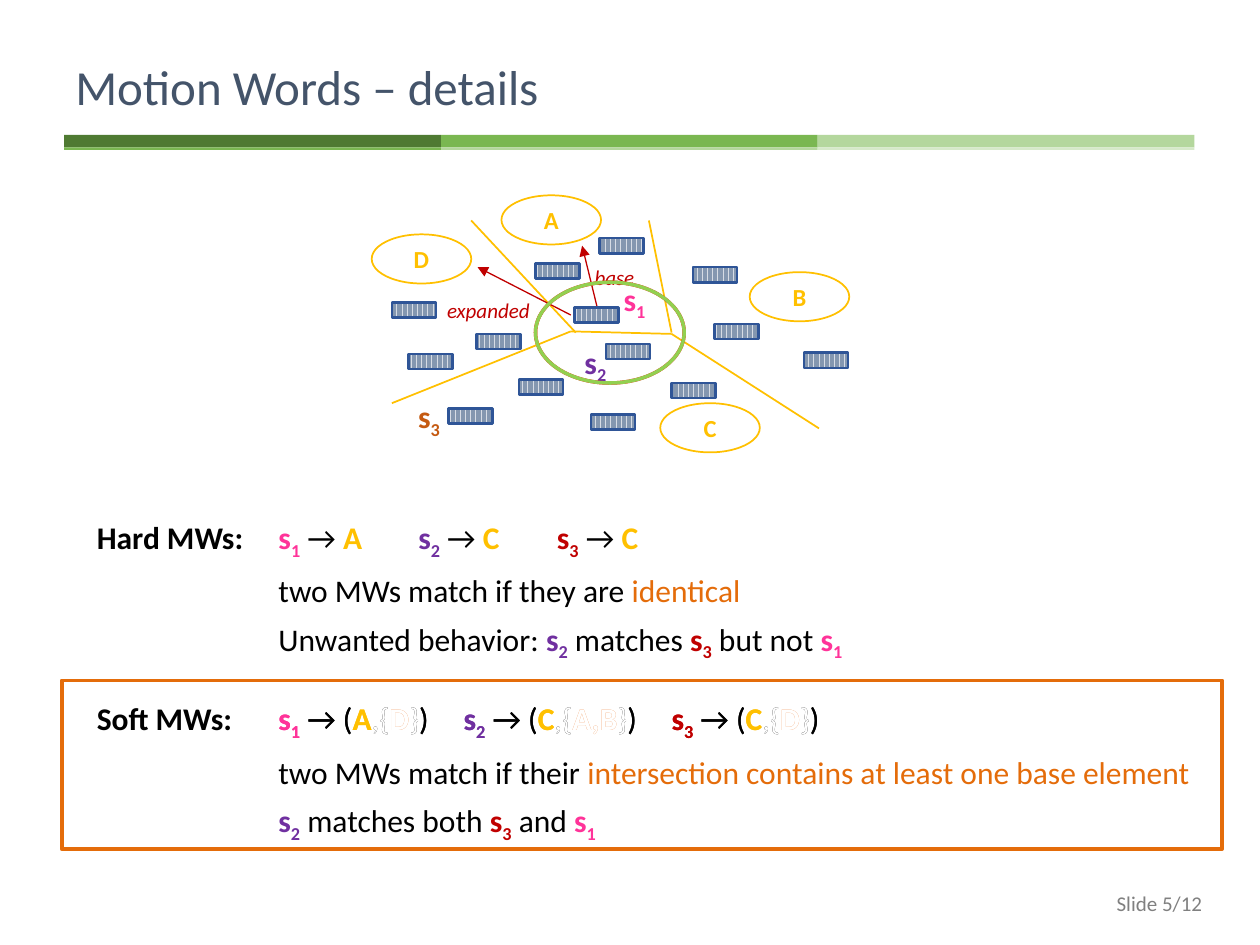
from pptx import Presentation
from pptx.util import Inches, Pt
from pptx.dml.color import RGBColor
from pptx.enum.dml import MSO_PATTERN
from pptx.enum.shapes import MSO_SHAPE, MSO_CONNECTOR
from pptx.enum.text import PP_ALIGN, MSO_ANCHOR
from lxml import etree

NS = "{http://schemas.openxmlformats.org/drawingml/2006/main}"
BLACK, WHITE, GOLD, RED = "000000", "FFFFFF", "FFC000", "C00000"
PINK, PLUM, RUST, FLAME = "FF3399", "7030A0", "C55A11", "E46C0A"
tint = RGBColor.from_string

deck = Presentation()
deck.slide_width, deck.slide_height = Inches(10), Inches(7.5)
slide = deck.slides.add_slide(deck.slide_layouts[6])


def draw(kind, box, fill=None, line=None, width=1):
    shape = slide.shapes.add_shape(kind, *map(Inches, box))
    shape.shadow.inherit = False
    if fill:
        shape.fill.solid()
        shape.fill.fore_color.rgb = tint(fill)
    else:
        shape.fill.background()
    if line:
        shape.line.color.rgb = tint(line)
        shape.line.width = Pt(width)
    else:
        shape.line.fill.background()
    return shape


def write(shape, rows, size=18, wrap=False, pad=0.1, space=0, tabs=()):
    frame = shape.text_frame
    frame.word_wrap = wrap
    frame.margin_left = frame.margin_right = Inches(pad)
    for n, row in enumerate(rows):
        para = frame.paragraphs[0] if n == 0 else frame.add_paragraph()
        para.space_before = Pt(space)
        if tabs and n == 0:
            stops = etree.SubElement(para._p.get_or_add_pPr(), NS + "tabLst")
            for stop in tabs:
                etree.SubElement(stops, NS + "tab", pos=str(Inches(stop)), algn="l")
        for words, color, style in row:
            run = para.add_run()
            run.text = words
            run.font.name = "Calibri"
            run.font.size = Pt(size)
            run.font.color.rgb = tint(color)
            run.font.bold = "b" in style
            run.font.italic = "i" in style
            if "s" in style:
                run._r.get_or_add_rPr().set("baseline", "-25000")
    return frame


for n, (bar, strip) in enumerate([("4F7A32", "7AB751"), ("7AB751", "B4D79D"), ("B4D79D", "D6E9C9")]):
    left = 0.51 + 2.99 * n
    draw(MSO_SHAPE.RECTANGLE, (left, 1.07, 2.99, 0.1), bar)
    draw(MSO_SHAPE.RECTANGLE, (left, 1.17, 2.99, 0.02), strip)

for box, words, size, color, align in [
    ((7.28, 7, 2.36, 0.34), "Slide 5/12", 12, "808080", PP_ALIGN.RIGHT),
    ((0.5, 0.3, 9, 0.77), "Motion Words – details", 28, "44546A", PP_ALIGN.LEFT),
]:
    area = slide.shapes.add_textbox(*map(Inches, box))
    frame = write(area, [[(words, color, "")]], size, True)
    frame.vertical_anchor = MSO_ANCHOR.MIDDLE
    frame.paragraphs[0].alignment = align

edges = [
    (3.74, 1.75, 4.57, 2.64), (4.53, 2.63, 5.33, 2.65), (5.15, 1.75, 5.33, 2.64),
    (5.33, 2.65, 6.5, 3.4), (3.11, 3.2, 4.53, 2.63),
]
rays = [(4.74, 2.44, 4.62, 1.95), (4.53, 2.5, 3.79, 2.12)]
for ends in edges + rays:
    link = slide.shapes.add_connector(MSO_CONNECTOR.STRAIGHT, *map(Inches, ends))
    link.line.color.rgb = tint(RED if ends in rays else GOLD)
    link.line.width = Pt(0.75 if ends in rays else 1)
    if ends in rays:
        etree.SubElement(link.line._get_or_add_ln(), NS + "tailEnd", type="triangle")
    etree.SubElement(link._element.spPr, NS + "effectLst")

s1, s2, s3 = [
    [("s", color, "b"), (digit, color, "bs")]
    for digit, color in [("1", PINK), ("2", PLUM), ("3", RED)]
]
rust = [("s", RUST, "b"), ("3", RUST, "bs")]
for box, row, size in [
    ((4.54, 2.67, 0.39, 0.4), s2, 18),
    ((4.85, 2.17, 0.39, 0.4), s1, 18),
    ((3.22, 3.1, 0.39, 0.4), rust, 18),
    ((0.67, 4.06, 1.38, 0.4), [("Hard MWs:", BLACK, "b")], 18),
    ((0.67, 5.5, 1.29, 0.4), [("Soft MWs:", BLACK, "b")], 18),
    ((4.62, 2.05, 0.52, 0.3), [("base", RED, "i")], 12),
    ((3.45, 2.31, 0.86, 0.3), [("expanded", RED, "i")], 12),
]:
    write(slide.shapes.add_textbox(*map(Inches, box)), [row], size)

for name, left, top in [("A", 3.98, 1.55), ("B", 5.95, 2.16), ("D", 2.95, 1.86), ("C", 5.24, 3.2)]:
    oval = draw(MSO_SHAPE.OVAL, (left, top, 0.79, 0.39), line=GOLD)
    frame = write(oval, [[(name, GOLD, "b")]], 14, pad=0)
    frame.margin_top = frame.margin_bottom = 0
    frame.vertical_anchor = MSO_ANCHOR.MIDDLE
    frame.paragraphs[0].alignment = PP_ALIGN.CENTER

for color in ("FF0000", "92D050"):
    draw(MSO_SHAPE.OVAL, (4.25, 2.24, 1.18, 0.8), line=color, width=2)

for left, top in [
    (5.33, 3.04), (4.69, 3.29), (5.67, 2.57), (5.5, 2.12), (6.38, 2.8),
    (4.76, 1.89), (4.25, 2.09), (3.11, 2.4), (3.24, 2.81), (3.78, 2.65),
    (4.12, 3.01), (4.56, 2.44), (4.81, 2.73), (3.56, 3.24),
]:
    chip = draw(MSO_SHAPE.RECTANGLE, (left, top, 0.35, 0.12), line="2F5597", width=1.5)
    chip.fill.patterned()
    chip.fill.pattern = MSO_PATTERN.DARK_VERTICAL
    chip.fill.fore_color.rgb = tint("8497B0")
    chip.fill.back_color.rgb = tint("D6DCE5")

hard = []
for mark, base, gap in [(s1, "A", "\t"), (s2, "C", "\t"), (s3, "C", "")]:
    hard += mark + [(" → ", BLACK, ""), (base + gap, GOLD, "b")]

softs = []
for brace, inner in [(BLACK, "ED7D31"), (WHITE, WHITE)]:
    row = []
    for mark, base, more, gap in [(s1, "A", "D", "\t"), (s2, "C", "A,B", "\t"), (s3, "C", "D", "")]:
        row += mark + [
            (" → (", BLACK, ""), (base, GOLD, "b"), (",{", brace, ""),
            (more, inner, "b"), ("}", brace, ""), (")" + gap, BLACK, ""),
        ]
    softs.append(row)

rules = [
    hard,
    [("two MWs match if they are ", BLACK, ""), ("identical", FLAME, "")],
    [("Unwanted behavior: ", BLACK, "")] + s2 + [(" matches ", BLACK, "")] + s3
    + [(" but not ", BLACK, "")] + s1,
]
goals = [
    softs[0],
    [("two MWs match if their ", BLACK, ""),
     ("intersection contains at least one base element", FLAME, "")],
    s2 + [(" matches both ", BLACK, "")] + s3 + [(" and ", BLACK, "")] + s1,
]
for box, rows, tabs in [
    ((2.17, 4.06, 4.72, 1.25), rules, (1.11, 2.21)),
    ((2.17, 5.5, 7.4, 1.25), goals, (1.47, 3.12)),
    ((2.17, 5.5, 4.47, 0.4), softs[1:], (1.47, 3.12)),
]:
    area = slide.shapes.add_textbox(*map(Inches, box))
    write(area, rows, wrap=True, pad=0.04, space=6, tabs=tabs)

draw(MSO_SHAPE.RECTANGLE, (0.49, 5.4, 9.21, 1.34), line=FLAME, width=2)

deck.save("out.pptx")
